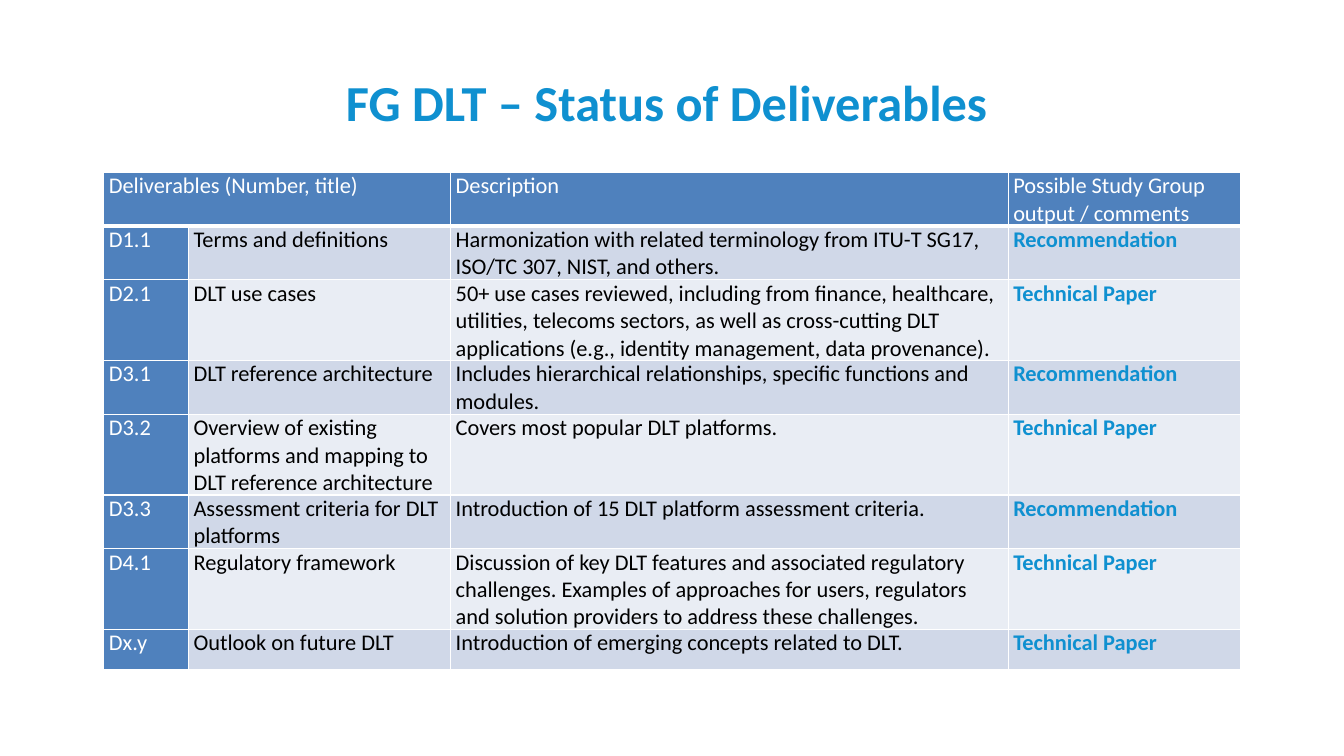
"""Build the slide on the status of the FG DLT deliverables."""
from lxml.etree import SubElement
from pptx import Presentation
from pptx.dml.color import RGBColor
from pptx.enum.text import MSO_ANCHOR as Anchor, PP_ALIGN as Align
from pptx.oxml.ns import qn
from pptx.util import Inches, Pt

WHITE = RGBColor(0xFF, 0xFF, 0xFF)
BLACK = RGBColor(0x00, 0x00, 0x00)
ACCENT = RGBColor(0x0F, 0x90, 0xD0)
HEADER = RGBColor(0x4F, 0x81, 0xBD)
BANDS = [RGBColor(0xD0, 0xD8, 0xE8), RGBColor(0xE9, 0xED, 0xF4)]

COLUMN_WIDTHS = [0.84, 2.6, 5.53, 2.3]
ROW_HEIGHTS = [0.4, 0.4, 0.8, 0.4, 0.6, 0.4, 0.8, 0.4]
COLUMN_COLORS = [WHITE, BLACK, BLACK, ACCENT]
ROWS = [
    ("Deliverables (Number, title)", "", "Description",
     "Possible Study Group output / comments"),
    ("D1.1", "Terms and definitions",
     "Harmonization with related terminology from ITU-T SG17, ISO/TC 307, NIST, and others.",
     "Recommendation"),
    ("D2.1", "DLT use cases",
     "50+ use cases reviewed, including from finance, healthcare, utilities, telecoms sectors, "
     "as well as cross-cutting DLT applications (e.g., identity management, data provenance).",
     "Technical Paper"),
    ("D3.1", "DLT reference architecture",
     "Includes hierarchical relationships, specific functions and modules.",
     "Recommendation"),
    ("D3.2", "Overview of existing platforms and mapping to DLT reference architecture",
     "Covers most popular DLT platforms.",
     "Technical Paper"),
    ("D3.3", "Assessment criteria for DLT platforms",
     "Introduction of 15 DLT platform assessment criteria.",
     "Recommendation"),
    ("D4.1", "Regulatory framework",
     "Discussion of key DLT features and associated regulatory challenges. Examples of approaches "
     "for users, regulators and solution providers to address these challenges.",
     "Technical Paper"),
    ("Dx.y", "Outlook on future DLT",
     "Introduction of emerging concepts related to DLT.",
     "Technical Paper"),
]


def write_text(frame, text, size=16, color=BLACK, bold=False, align=Align.LEFT):
    frame.word_wrap = True
    paragraph = frame.paragraphs[0]
    paragraph.alignment = align
    run = paragraph.add_run()
    run.text = text
    run.font.name = "Calibri"
    run.font.size = Pt(size)
    run.font.bold = bold
    run.font.color.rgb = color


def add_borders(cell, bottom_width):
    properties = cell._tc.get_or_add_tcPr()
    for side, width in (("lnL", 1), ("lnR", 1), ("lnT", 1), ("lnB", bottom_width)):
        line = SubElement(properties, qn(f"a:{side}"), w=str(Pt(width)))
        fill = SubElement(line, qn("a:solidFill"))
        SubElement(fill, qn("a:srgbClr"), val=str(WHITE))


presentation = Presentation()
presentation.slide_width = Inches(13.33)
presentation.slide_height = Inches(7.5)
slide = presentation.slides.add_slide(presentation.slide_layouts[6])

title = slide.shapes.add_textbox(Inches(0.67), Inches(0.62), Inches(12), Inches(0.78))
title.text_frame.vertical_anchor = Anchor.MIDDLE
write_text(title.text_frame, "FG DLT – Status of Deliverables ",
           size=36, color=ACCENT, bold=True, align=Align.CENTER)

table = slide.shapes.add_table(
    len(ROWS), len(COLUMN_WIDTHS), Inches(1.03), Inches(1.71),
    Inches(sum(COLUMN_WIDTHS)), Inches(sum(ROW_HEIGHTS))).table
for column, width in zip(table.columns, COLUMN_WIDTHS):
    column.width = Inches(width)
for row, height in zip(table.rows, ROW_HEIGHTS):
    row.height = Inches(height)
table.cell(0, 0).merge(table.cell(0, 1))

for row_index, texts in enumerate(ROWS):
    is_header = row_index == 0
    for column_index, text in enumerate(texts):
        cell = table.cell(row_index, column_index)
        cell.margin_left = cell.margin_right = Inches(0.05)
        cell.margin_top = cell.margin_bottom = 0
        add_borders(cell, 3 if is_header else 1)
        cell.fill.solid()
        is_blue = is_header or column_index == 0
        cell.fill.fore_color.rgb = HEADER if is_blue else BANDS[(row_index - 1) % 2]
        if text:
            write_text(cell.text_frame, text,
                       color=WHITE if is_header else COLUMN_COLORS[column_index],
                       bold=not is_header and column_index == 3)

presentation.save("out.pptx")
